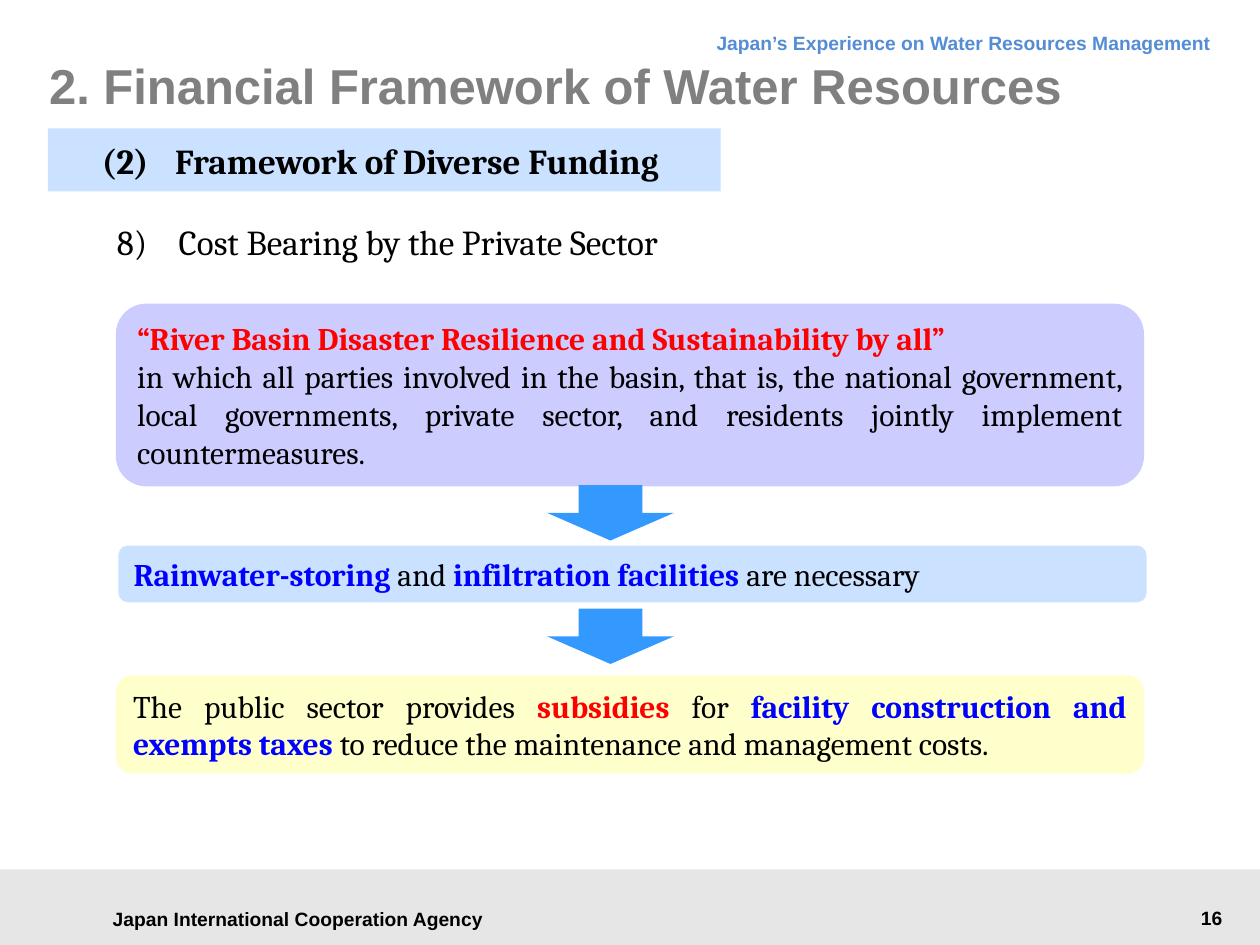
"""Build the slide on cost bearing by the private sector."""
from dataclasses import dataclass

import pptx
import pptx.dml.color
import pptx.enum.shapes
import pptx.enum.text
import pptx.shapes.autoshape
import pptx.slide
import pptx.text.text
import pptx.util

Inches = pptx.util.Inches
Pt = pptx.util.Pt
RGBColor = pptx.dml.color.RGBColor
Shape = pptx.enum.shapes.MSO_SHAPE
Align = pptx.enum.text.PP_ALIGN
Anchor = pptx.enum.text.MSO_ANCHOR

BLACK = RGBColor(0, 0, 0)
RED = RGBColor(0xFF, 0, 0)
BLUE = RGBColor(0, 0, 0xFF)
GRAY = RGBColor(0x80, 0x80, 0x80)
HEADER_BLUE = RGBColor(0x54, 0x8D, 0xD4)
FOOTER_GRAY = RGBColor(0xE6, 0xE6, 0xE6)
LAVENDER = RGBColor(0xCC, 0xCC, 0xFF)
LIGHT_BLUE = RGBColor(0xCA, 0xE2, 0xFF)
LIGHT_YELLOW = RGBColor(0xFF, 0xFF, 0xCC)
ARROW_BLUE = RGBColor(0x33, 0x99, 0xFF)


@dataclass(frozen=True)
class Box:
    left: float
    top: float
    width: float
    height: float

    def lengths(self) -> tuple[pptx.util.Length, ...]:
        return tuple(Inches(value) for value in (self.left, self.top, self.width, self.height))


@dataclass(frozen=True)
class Span:
    text: str
    color: RGBColor = BLACK
    bold: bool = False


@dataclass(frozen=True)
class Label:
    box: Box
    span: Span
    size: int
    font: str = "Arial"
    align: Align = Align.LEFT
    anchor: Anchor = Anchor.TOP
    line_spacing: pptx.util.Length | None = None
    inset: tuple[float, float] = (0.1, 0.05)
    hanging: float = 0


@dataclass(frozen=True)
class Panel:
    box: Box
    fill: RGBColor
    paragraphs: tuple[tuple[Span, ...], ...]


LABELS = (
    Label(Box(0.71, 7.12, 3.31, 0.34), Span("Japan International Cooperation Agency", BLACK, True), 11,
          align=Align.CENTER, anchor=Anchor.MIDDLE),
    Label(Box(2.72, 0.13, 6.99, 0.38), Span("Japan’s Experience on Water Resources Management", HEADER_BLUE, True), 11,
          align=Align.RIGHT, line_spacing=Pt(18)),
    Label(Box(8.23, 7.14, 1.57, 0.29), Span("16", BLACK, True), 11, align=Align.RIGHT),
    Label(Box(0.39, 0.28, 9, 0.79), Span("2. Financial Framework of Water Resources", GRAY, True), 28,
          anchor=Anchor.MIDDLE, inset=(0, 0)),
    Label(Box(0.83, 1.7, 8.69, 0.44), Span("8)\tCost Bearing by the Private Sector"), 20, "Cambria", hanging=0.49),
)

PANELS = (
    Panel(Box(0.92, 2.41, 8.16, 1.45), LAVENDER, (
        (Span("“River Basin Disaster Resilience and Sustainability by all” ", RED, True),),
        (Span("in which all parties involved in the basin, that is, the national government, local governments, "
              "private sector, and residents jointly implement countermeasures."),),
    )),
    Panel(Box(0.94, 4.33, 8.16, 0.45), LIGHT_BLUE, ((
        Span("Rainwater-storing ", BLUE, True),
        Span("and "),
        Span("infiltration facilities ", BLUE, True),
        Span("are necessary"),
    ),)),
    Panel(Box(0.92, 5.36, 8.16, 0.78), LIGHT_YELLOW, ((
        Span("The public sector provides "),
        Span("subsidies", RED, True),
        Span(" for "),
        Span("facility construction and exempts taxes ", BLUE, True),
        Span("to reduce the maintenance and management costs."),
    ),)),
)

ARROW_TOPS = (3.85, 4.83)


def add_span(paragraph: pptx.text.text._Paragraph, span: Span, size: int, font: str) -> None:
    run = paragraph.add_run()
    run.text = span.text
    run.font.name = font
    run.font.size = Pt(size)
    run.font.bold = span.bold
    run.font.color.rgb = span.color


def set_hanging(paragraph: pptx.text.text._Paragraph, inches: float) -> None:
    properties = paragraph._p.get_or_add_pPr()
    properties.set("marL", str(Inches(inches)))
    properties.set("indent", str(-Inches(inches)))


def add_filled(slide: pptx.slide.Slide, kind: Shape, box: Box, fill: RGBColor) -> pptx.shapes.autoshape.Shape:
    shape = slide.shapes.add_shape(kind, *box.lengths())
    shape.shadow.inherit = False
    shape.fill.solid()
    shape.fill.fore_color.rgb = fill
    shape.line.fill.background()
    return shape


def add_label(slide: pptx.slide.Slide, label: Label) -> None:
    frame = slide.shapes.add_textbox(*label.box.lengths()).text_frame
    frame.word_wrap = True
    frame.vertical_anchor = label.anchor
    frame.margin_left = frame.margin_right = Inches(label.inset[0])
    frame.margin_top = frame.margin_bottom = Inches(label.inset[1])
    paragraph = frame.paragraphs[0]
    paragraph.alignment = label.align
    if label.line_spacing:
        paragraph.line_spacing = label.line_spacing
    if label.hanging:
        set_hanging(paragraph, label.hanging)
    add_span(paragraph, label.span, label.size, label.font)


def add_panel(slide: pptx.slide.Slide, panel: Panel) -> None:
    frame = add_filled(slide, Shape.ROUNDED_RECTANGLE, panel.box, panel.fill).text_frame
    frame.word_wrap = True
    frame.vertical_anchor = Anchor.MIDDLE
    for index, spans in enumerate(panel.paragraphs):
        paragraph = frame.add_paragraph() if index else frame.paragraphs[0]
        paragraph.alignment = Align.JUSTIFY
        for span in spans:
            add_span(paragraph, span, 18, "Cambria")


def add_section_heading(slide: pptx.slide.Slide) -> None:
    frame = add_filled(slide, Shape.RECTANGLE, Box(0.38, 1.02, 5.34, 0.5), LIGHT_BLUE).text_frame
    frame.word_wrap = False
    frame.vertical_anchor = Anchor.MIDDLE
    frame.margin_left, frame.margin_right = Inches(0.43), Inches(0.35)
    frame.margin_top = frame.margin_bottom = Inches(0.08)
    paragraph = frame.paragraphs[0]
    paragraph.alignment = Align.LEFT
    set_hanging(paragraph, 0.58)
    add_span(paragraph, Span("(2)\tFramework of Diverse Funding", BLACK, True), 20, "Cambria")


def main() -> None:
    presentation = pptx.Presentation()
    presentation.slide_width = Inches(10)
    presentation.slide_height = Inches(7.5)
    slide = presentation.slides.add_slide(presentation.slide_layouts[6])
    add_filled(slide, Shape.RECTANGLE, Box(0, 6.9, 10, 0.6), FOOTER_GRAY)
    for label in LABELS:
        add_label(slide, label)
    for panel in PANELS:
        add_panel(slide, panel)
    for top in ARROW_TOPS:
        add_filled(slide, Shape.DOWN_ARROW, Box(4.34, top, 1.01, 0.44), ARROW_BLUE)
    add_section_heading(slide)
    presentation.save("out.pptx")


if __name__ == "__main__":
    main()
